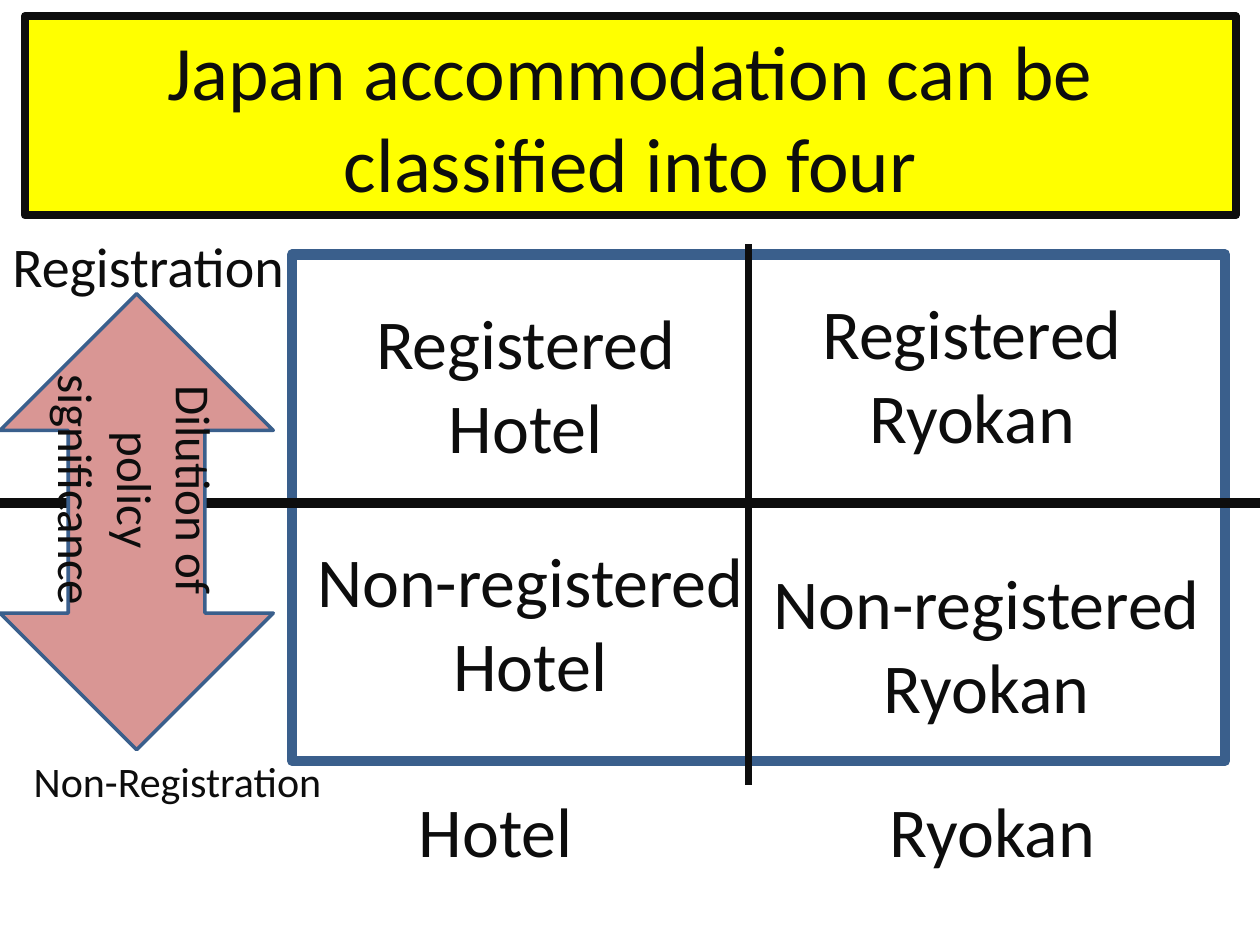
import pptx
import pptx.util
import pptx.dml.color
import pptx.enum.shapes
import pptx.enum.text
import pptx.oxml

Pt = pptx.util.Pt
ALIGN = pptx.enum.text.PP_ALIGN
ANCHOR = pptx.enum.text.MSO_ANCHOR
SHAPE = pptx.enum.shapes.MSO_SHAPE
INK, BLUE, YELLOW, PINK = "0D0D0D", "3A5F8C", "FFFF00", "D99694"


def color(value):
    return pptx.dml.color.RGBColor.from_string(value)


def write(shape, text, size, align=ALIGN.CENTER, anchor=ANCHOR.TOP):
    """Fill a shape with one wrapped paragraph."""
    frame = shape.text_frame
    frame.word_wrap = True
    frame.vertical_anchor = anchor
    para = frame.paragraphs[0]
    para.text = text
    para.alignment = align
    para.font.name = "Calibri"
    para.font.size = Pt(size)
    para.font.color.rgb = color(INK)


deck = pptx.Presentation()
deck.slide_width, deck.slide_height = Pt(720), Pt(540)
page = deck.slides.add_slide(deck.slide_layouts[5])

# Title
title = page.shapes.title
title.left, title.top, title.width, title.height = Pt(14.2), Pt(9.2), Pt(692), Pt(113.8)
title.fill.solid()
title.fill.fore_color.rgb = color(YELLOW)
title.line.color.rgb = color(INK)
title.line.width = Pt(4.5)
write(title, "Japan accommodation can be classified into four", 44, anchor=ANCHOR.MIDDLE)

# Matrix frame and its two axes
matrix = page.shapes.add_shape(SHAPE.RECTANGLE, Pt(167), Pt(145.4), Pt(533), Pt(289.4))
matrix.shadow.inherit = False
matrix.fill.background()
matrix.line.color.rgb = color(BLUE)
matrix.line.width = Pt(6)

axes = [(427.7, 139.7, 427.7, 448.6, 4.5), (0, 287.3, 720, 287.3, 6)]
for x1, y1, x2, y2, weight in axes:
    axis = page.shapes.add_connector(
        pptx.enum.shapes.MSO_CONNECTOR.STRAIGHT, Pt(x1), Pt(y1), Pt(x2), Pt(y2))
    axis.line.color.rgb = color(INK)
    axis.line.width = Pt(weight)
    axis._element.spPr.append(pptx.oxml.parse_xml(
        '<a:effectLst xmlns:a="http://schemas.openxmlformats.org/drawingml/2006/main"/>'))

# Policy arrow
arrow = page.shapes.add_shape(SHAPE.UP_DOWN_ARROW, Pt(0), Pt(167.8), Pt(156.2), Pt(260.6))
arrow.adjustments[0], arrow.adjustments[1] = 0.695, 0.5
arrow.shadow.inherit = False
arrow.fill.solid()
arrow.fill.fore_color.rgb = color(PINK)
arrow.line.color.rgb = color(BLUE)
arrow.line.width = Pt(2)
write(arrow, "Dilution of policy significance", 28, anchor=ANCHOR.MIDDLE)
arrow.text_frame._txBody.bodyPr.set("vert", "eaVert")

# Quadrant names and axis labels: text, left, top, width, height, size, alignment
labels = [
    ("Registered Hotel", 190, 167.8, 221, 104.4, 40, ALIGN.CENTER),
    ("Registered Ryokan", 445, 162, 221, 104.4, 40, ALIGN.CENTER),
    ("Non-registered Hotel", 167, 303.8, 272.2, 104.4, 40, ALIGN.CENTER),
    ("Non-registered Ryokan", 427.7, 316, 272.2, 104.4, 40, ALIGN.CENTER),
    ("Hotel", 206.6, 446.4, 153.4, 55.4, 40, ALIGN.CENTER),
    ("Ryokan", 490.3, 446.4, 153.4, 55.4, 40, ALIGN.CENTER),
    ("Registration", 0, 129, 206.6, 46, 32, ALIGN.LEFT),
    ("Non-Registration", 12.2, 428.4, 217.4, 36, 24, ALIGN.LEFT),
]
for text, left, top, width, height, size, align in labels:
    box = page.shapes.add_textbox(Pt(left), Pt(top), Pt(width), Pt(height))
    write(box, text, size, align)

deck.save("out.pptx")
